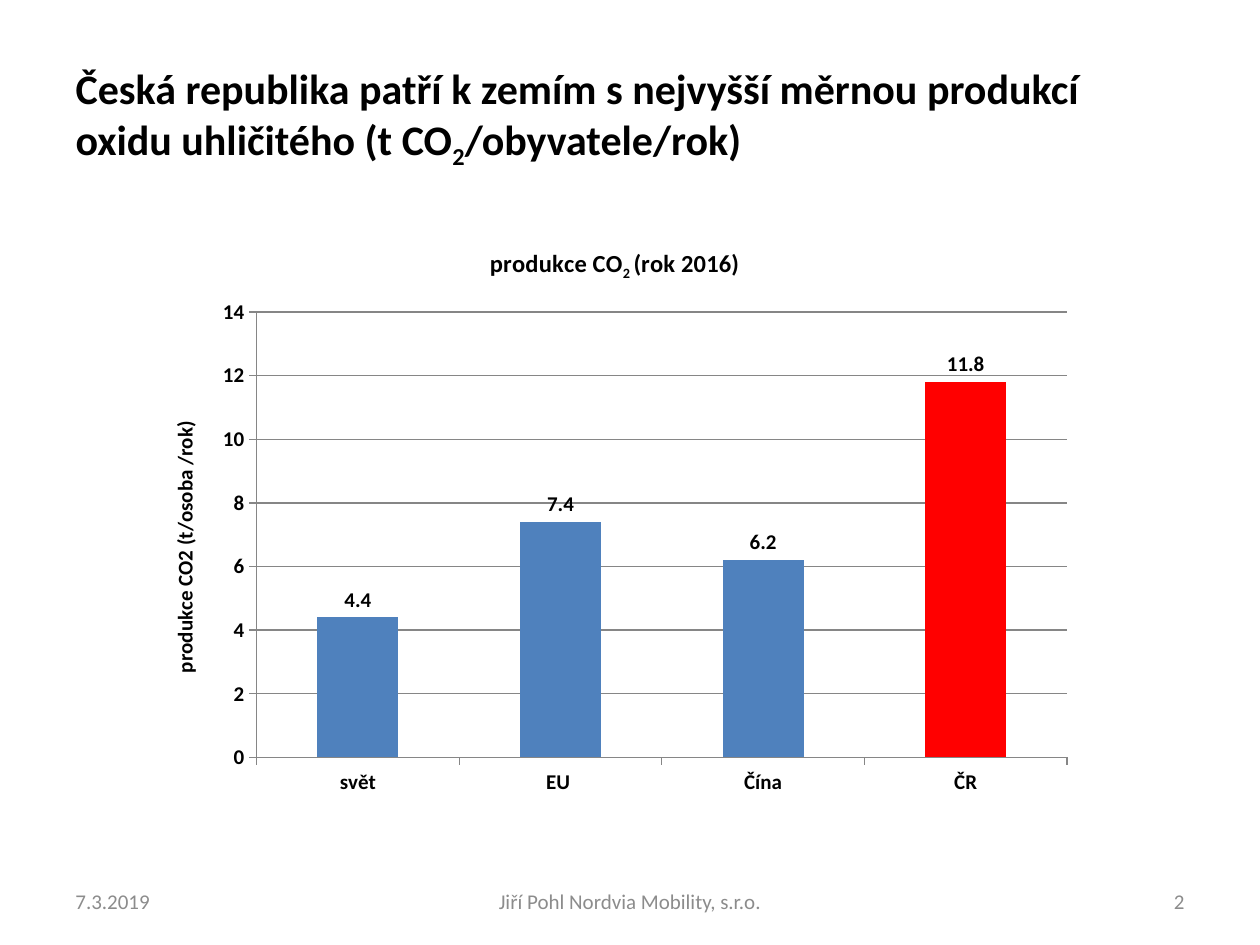
"""Build a slide comparing CO2 production per person in four regions."""
from lxml import etree
from pptx import Presentation
from pptx import util as u
from pptx.chart.data import CategoryChartData
from pptx.dml.color import RGBColor
from pptx.enum import chart as ch, text
from pptx.oxml import parse_xml
from pptx.oxml.ns import qn

COLORS = {"text": "000000", "footer": "8C8C8C", "bar": "4F81BD",
          "highlight": "FF0000", "axis": "868686"}
FONT = "Calibri"


def style(font, size, color="text", bold=True):
    font.name, font.size, font.bold = FONT, u.Pt(size), bold
    font.color.rgb = RGBColor.from_string(COLORS[color])


def write_runs(paragraph, parts, size):
    for part in parts:
        run = paragraph.add_run()
        run.text = part
        style(run.font, size)
        if part.strip() == "2":
            run.font._element.set("baseline", "-25000")


prs = Presentation()
prs.slide_width, prs.slide_height = u.Pt(720), u.Pt(540)
slide = prs.slides.add_slide(prs.slide_layouts[5])

headline = slide.shapes.title
headline.left, headline.top = u.Pt(36), u.Pt(21.6)
headline.width, headline.height = u.Pt(648), u.Pt(90)
headline.text_frame.vertical_anchor = text.MSO_ANCHOR.MIDDLE
headline_line = headline.text_frame.paragraphs[0]
headline_line.alignment = text.PP_ALIGN.LEFT
write_runs(headline_line, [
    "Česká republika patří k zemím s nejvyšší měrnou produkcí oxidu uhličitého (t CO",
    "2", "/obyvatele/rok)"], 24)

emissions = CategoryChartData(number_format="0.0")
emissions.categories = ["svět", "EU ", "Čína", "ČR"]
emissions.add_series("Series 1", [4.4, 7.4, 6.2, 11.8])
chart = slide.shapes.add_chart(
    ch.XL_CHART_TYPE.COLUMN_CLUSTERED, u.Pt(82), u.Pt(128), u.Pt(538.5), u.Pt(335),
    emissions).chart
style(chart.font, 10, bold=False)
chart.has_legend = False
chart.has_title = True
write_runs(chart.chart_title.text_frame.paragraphs[0],
           ["produkce CO", "2 ", "(rok 2016)"], 14)
chart.chart_title.include_in_layout = False

regions, tonnes = chart.category_axis, chart.value_axis
for axis in (regions, tonnes):
    style(axis.tick_labels.font, 12)
    axis.major_tick_mark = ch.XL_TICK_MARK.OUTSIDE
    axis.minor_tick_mark = ch.XL_TICK_MARK.NONE
tonnes.minimum_scale, tonnes.maximum_scale, tonnes.major_unit = 0, 14, 2
tonnes.tick_labels.number_format = "0"
tonnes.tick_labels.number_format_is_linked = False
tonnes.has_major_gridlines = True
for line in (regions.format.line, tonnes.format.line, tonnes.major_gridlines.format.line):
    line.width = u.Pt(0.75)
    line.color.rgb = RGBColor.from_string(COLORS["axis"])
write_runs(tonnes.axis_title.text_frame.paragraphs[0], ["produkce CO2 (t/osoba /rok)"], 12)

plot = chart.plots[0]
plot.gap_width = 150
plot.vary_by_categories = False
bars = plot.series[0]
for part, color in ((bars, "bar"), (bars.points[3], "highlight")):
    part.format.fill.solid()
    part.format.fill.fore_color.rgb = RGBColor.from_string(COLORS[color])
labels = bars.data_labels
labels.show_value = True
labels.position = ch.XL_LABEL_POSITION.OUTSIDE_END
labels.number_format, labels.number_format_is_linked = "0.0", False
style(labels.font, 12)

plot_area = chart._chartSpace.chart.plotArea
for layout in plot_area.findall(qn("c:layout")):
    plot_area.remove(layout)
layout = parse_xml(
    '<c:layout xmlns:c="http://schemas.openxmlformats.org/drawingml/2006/chart"/>')
manual = etree.SubElement(layout, qn("c:manualLayout"))
for tag, value in (("layoutTarget", "inner"), ("xMode", "edge"), ("yMode", "edge"),
                   ("x", "0.12"), ("y", "0.15"), ("w", "0.86"), ("h", "0.76")):
    etree.SubElement(manual, qn("c:" + tag)).set("val", value)
plot_area.insert(0, layout)

for left, width, wording, align in (
        (36, 168, "7.3.2019", text.PP_ALIGN.LEFT),
        (246, 228, "Jiří Pohl Nordvia Mobility, s.r.o.", text.PP_ALIGN.CENTER),
        (516, 168, "2", text.PP_ALIGN.RIGHT)):
    footer = slide.shapes.add_textbox(u.Pt(left), u.Pt(500.5), u.Pt(width), u.Pt(28.75))
    frame = footer.text_frame
    frame.word_wrap = True
    frame.vertical_anchor = text.MSO_ANCHOR.MIDDLE
    frame.text = wording
    frame.paragraphs[0].alignment = align
    style(frame.paragraphs[0].runs[0].font, 12, "footer", bold=False)

prs.save("out.pptx")
